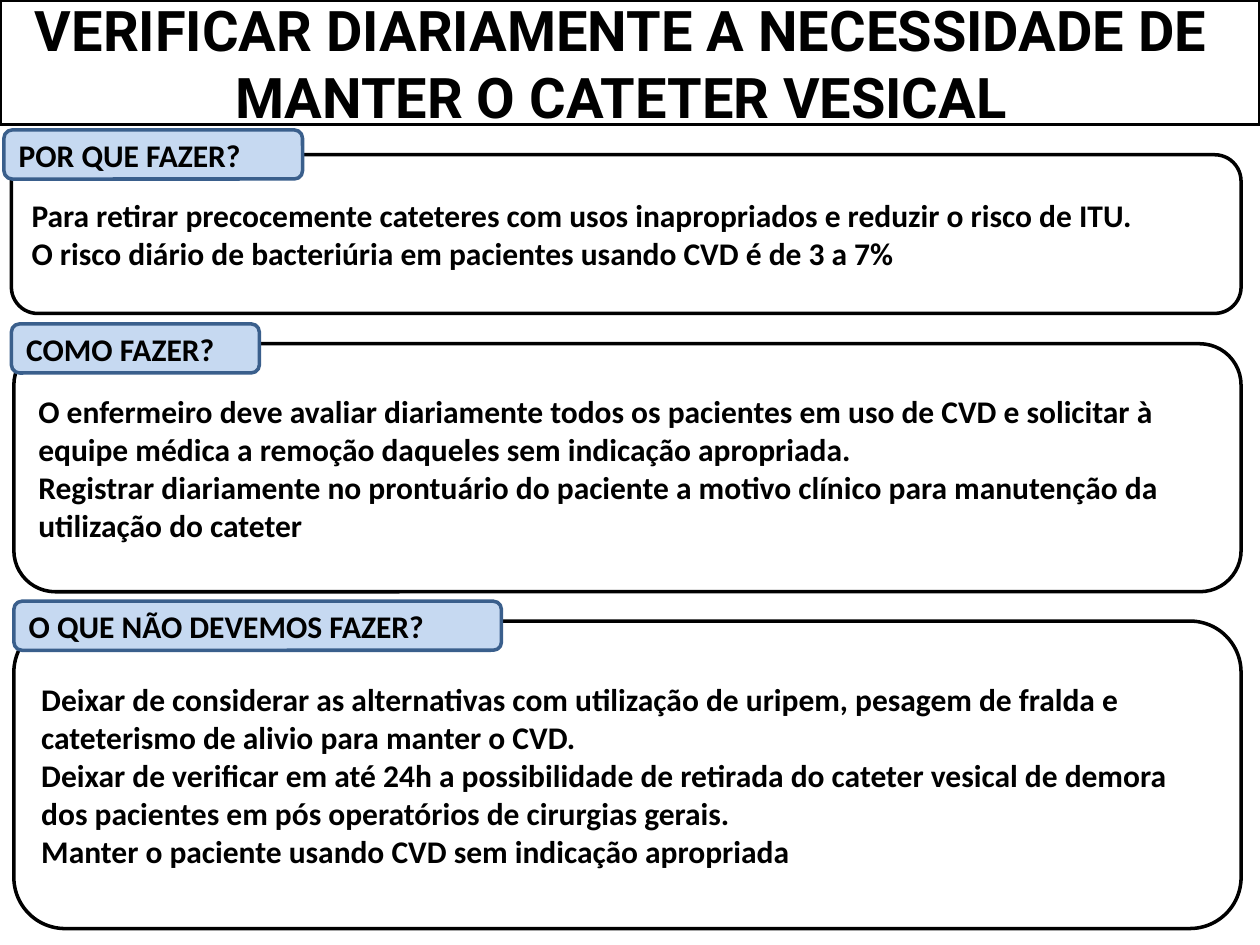
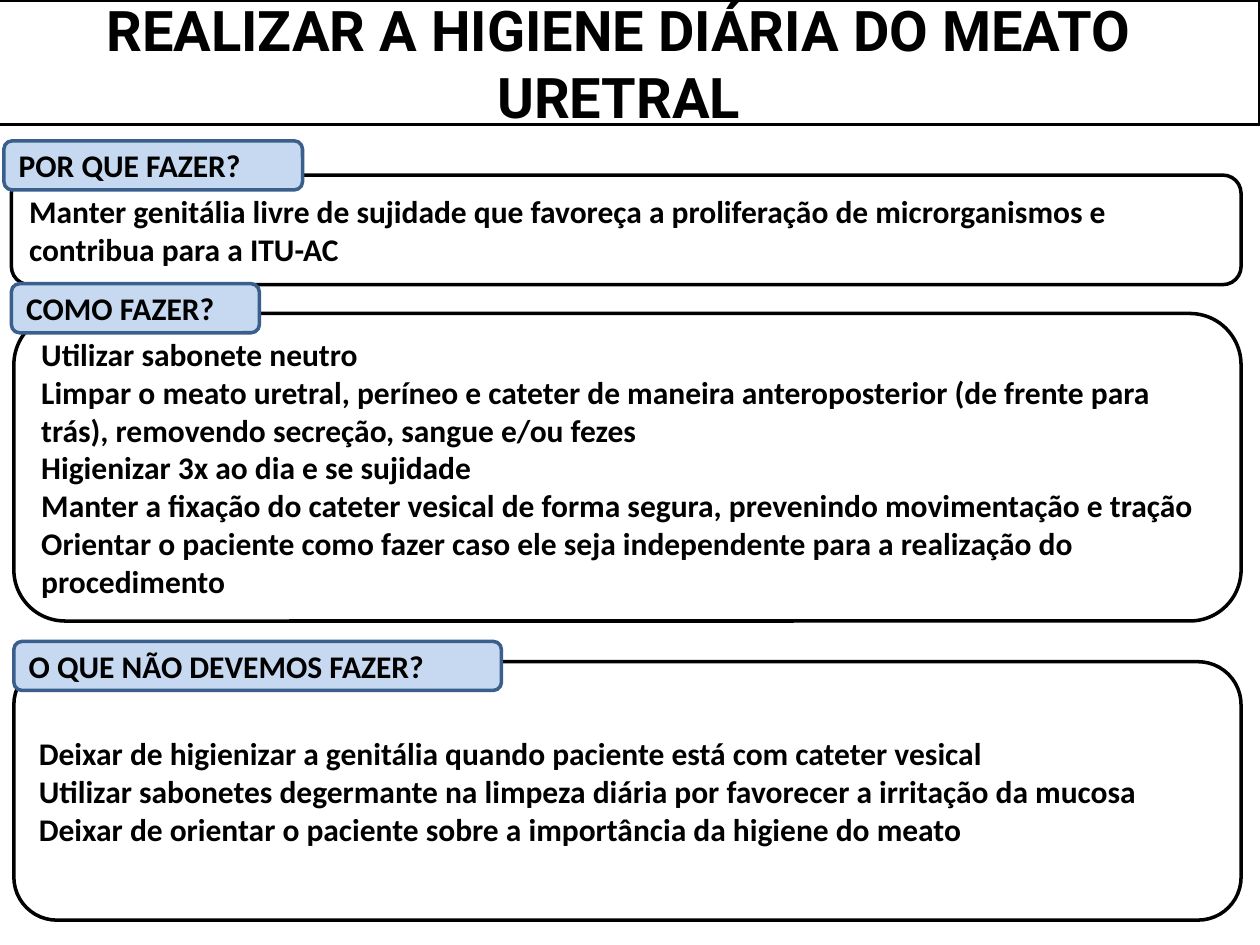
"""Build two slides on the daily care of urinary catheters."""
from pptx import Presentation
from pptx.dml.color import RGBColor
from pptx.enum.shapes import MSO_SHAPE
from pptx.enum.text import MSO_ANCHOR, MSO_AUTO_SIZE, PP_ALIGN
from pptx.util import Cm, Pt

ROUNDED = MSO_SHAPE.ROUNDED_RECTANGLE
MIDDLE = MSO_ANCHOR.MIDDLE
NO_FIT = MSO_AUTO_SIZE.NONE
LEFT, CENTER = PP_ALIGN.LEFT, PP_ALIGN.CENTER

BLACK, WHITE = "000000", "FFFFFF"
TAG_FILL, TAG_LINE = "C6D9F1", "3A5F8C"
TITLE_FONT, BODY_FONT = "Roboto", "Calibri"
SLIDE_W, SLIDE_H = 25.4, 19.05
TITLE_H = 2.51
TAG_H = 0.99
PANEL_RIGHT = 25.02

# Heading, tag left, tag width, panel left
SECTIONS = [
    ("POR QUE FAZER?", 0.08, 6.02, 0.23),
    ("COMO FAZER?", 0.23, 5.0, 0.28),
    ("O QUE NÃO DEVEMOS FAZER?", 0.28, 9.83, 0.28),
]

# Title, title left, then tag top, panel top, panel height and lines per section
SLIDES = [
    ("VERIFICAR DIARIAMENTE A NECESSIDADE DE MANTER O CATETER VESICAL", 0, [
        (2.62, 3.12, 3.2, [
            "Para retirar precocemente cateteres com usos inapropriados e reduzir o risco de ITU.",
            "O risco diário de bacteriúria em pacientes usando CVD é de 3 a 7%",
        ]),
        (6.53, 6.93, 5.0, [
            "O enfermeiro deve avaliar diariamente todos os pacientes em uso de CVD e solicitar à "
            "equipe médica a remoção daqueles sem indicação apropriada.",
            "Registrar diariamente no prontuário do paciente a motivo clínico para manutenção da "
            "utilização do cateter",
        ]),
        (12.12, 12.52, 6.2, [
            "Deixar de considerar as alternativas com utilização de uripem, pesagem de fralda e "
            "cateterismo de alivio para manter o CVD.",
            "Deixar de verificar em até 24h a possibilidade de retirada do cateter vesical de demora "
            "dos pacientes em pós operatórios de cirurgias gerais.",
            "Manter o paciente usando CVD sem indicação apropriada",
        ]),
    ]),
    ("REALIZAR A HIGIENE DIÁRIA DO MEATO URETRAL", -0.1, [
        (2.84, 3.53, 2.21, [
            "Manter genitália livre de sujidade que favoreça a proliferação de microrganismos e "
            "contribua para a ITU-AC",
        ]),
        (5.72, 6.32, 6.2, [
            "Utilizar sabonete neutro",
            "Limpar o meato uretral, períneo e cateter de maneira anteroposterior (de frente para "
            "trás), removendo secreção, sangue e/ou fezes",
            "Higienizar 3x ao dia e se sujidade",
            "Manter a fixação do cateter vesical de forma segura, prevenindo movimentação e tração",
            "Orientar o paciente como fazer caso ele seja independente para a realização do "
            "procedimento",
        ]),
        (12.93, 13.34, 5.21, [
            "Deixar de higienizar a genitália quando paciente está com cateter vesical",
            "Utilizar sabonetes degermante na limpeza diária por favorecer a irritação da mucosa",
            "Deixar de orientar o paciente sobre a importância da higiene do meato",
        ]),
    ]),
]


def rgb(value):
    """Return the colour for a hex string."""
    return RGBColor.from_string(value)


def paint(sp, fill, line):
    """Give a shape its solid fill and outline."""
    sp.fill.solid()
    sp.fill.fore_color.rgb = rgb(fill)
    sp.line.color.rgb = rgb(line)
    sp.line.width = Pt(2)


def write(sp, lines, font, size, align):
    """Fill a shape with bold black paragraphs, centred vertically."""
    tf = sp.text_frame
    tf.text = "\n".join(lines)
    tf.word_wrap = True
    tf.auto_size = NO_FIT
    tf.vertical_anchor = MIDDLE
    for p in tf.paragraphs:
        p.alignment = align
        p.font.name = font
        p.font.size = Pt(size)
        p.font.bold = True
        p.font.color.rgb = rgb(BLACK)


def add_title(s, text, left):
    """Turn the title placeholder into the outlined band at the top."""
    sp = s.shapes.title
    sp.left, sp.top = Cm(left), Cm(0)
    sp.width, sp.height = Cm(SLIDE_W - left), Cm(TITLE_H)
    paint(sp, WHITE, BLACK)
    write(sp, [text], TITLE_FONT, 32, CENTER)
    sp.text_frame.margin_right = Cm(0.6)


def add_box(s, left, top, width, height, lines, fill, line):
    """Add a rounded box with left-aligned text."""
    sp = s.shapes.add_shape(ROUNDED, Cm(left), Cm(top), Cm(width), Cm(height))
    sp.shadow.inherit = False
    paint(sp, fill, line)
    write(sp, lines, BODY_FONT, 18, LEFT)


def add_section(s, section, content):
    """Add a text panel and the heading tag that overlaps its top edge."""
    heading, tag_left, tag_width, left = section
    tag_top, top, height, lines = content
    add_box(s, left, top, PANEL_RIGHT - left, height, lines, WHITE, BLACK)
    add_box(s, tag_left, tag_top, tag_width, TAG_H, [heading], TAG_FILL, TAG_LINE)


def main():
    """Build and save the presentation."""
    prs = Presentation()
    prs.slide_width, prs.slide_height = Cm(SLIDE_W), Cm(SLIDE_H)
    for title, left, contents in SLIDES:
        s = prs.slides.add_slide(prs.slide_layouts.get_by_name("Title Only"))
        add_title(s, title, left)
        for section, content in zip(SECTIONS, contents):
            add_section(s, section, content)
    prs.save("out.pptx")


if __name__ == "__main__":
    main()
